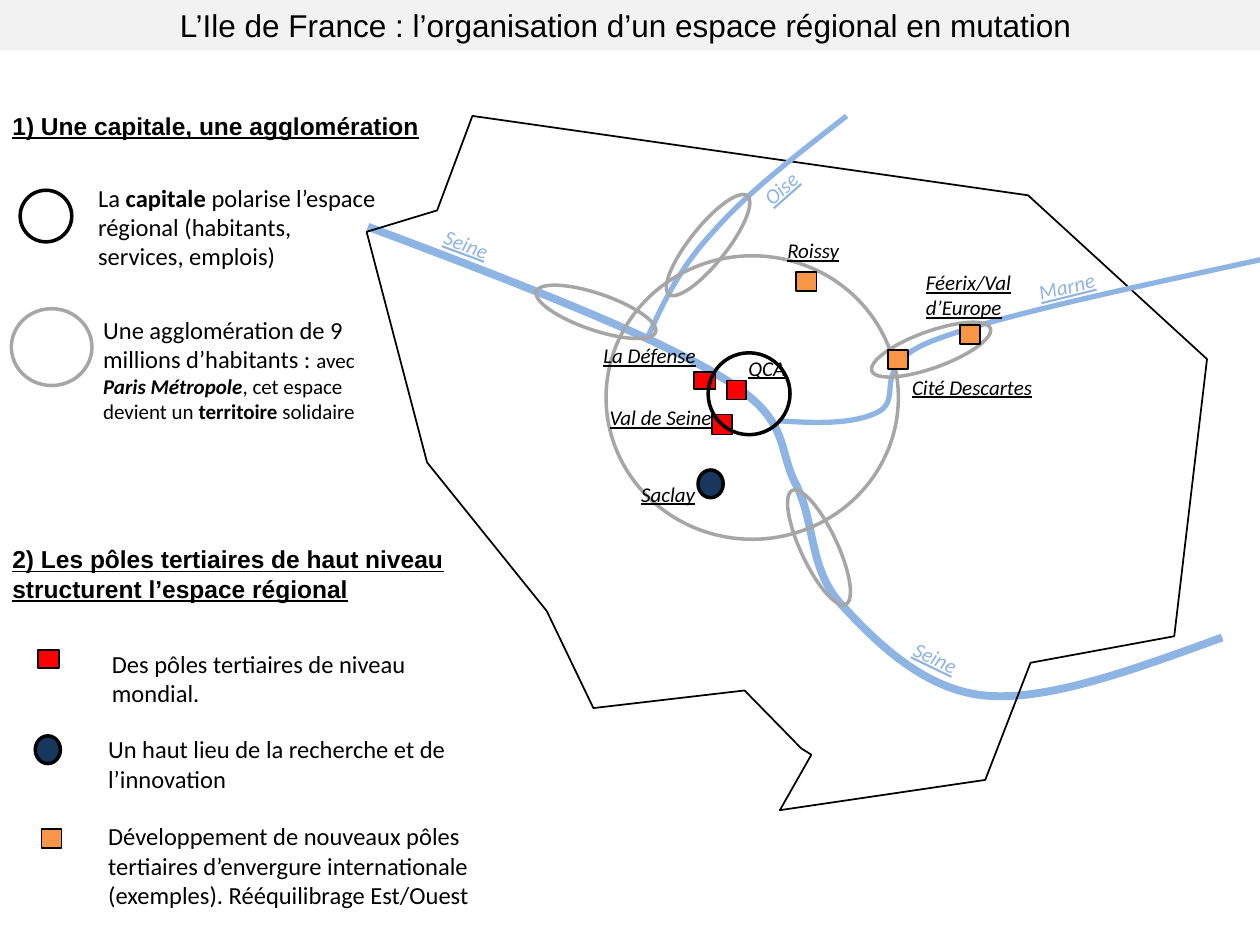
from typing import NamedTuple, Optional

from lxml.etree import SubElement
from pptx import Presentation
from pptx.dml.color import RGBColor
from pptx.enum.shapes import MSO_SHAPE as Preset
from pptx.enum.text import MSO_ANCHOR, PP_ALIGN
from pptx.oxml.ns import qn
from pptx.util import Inches, Pt

BLACK = RGBColor(0x00, 0x00, 0x00)
WHITE = RGBColor(0xFF, 0xFF, 0xFF)
RED = RGBColor(0xFF, 0x00, 0x00)
ORANGE = RGBColor(0xF7, 0x96, 0x46)
NAVY = RGBColor(0x17, 0x37, 0x5E)
GREY = RGBColor(0xA6, 0xA6, 0xA6)
PALE_GREY = RGBColor(0xF2, 0xF2, 0xF2)
RIVER_BLUE = RGBColor(0x8E, 0xB4, 0xE3)


class Style(NamedTuple):
    preset: Preset
    fill: Optional[RGBColor]
    line: RGBColor
    weight: float


class Symbol(NamedTuple):
    style: Style
    left: float
    top: float
    width: float
    height: float
    rotation: float = 0


class Label(NamedTuple):
    text: str
    left: float
    top: float
    width: float
    height: float = 0.3
    rotation: float = 0
    color: RGBColor = BLACK


class Span(NamedTuple):
    text: str
    size: float = 14
    bold: bool = False
    italic: bool = False


class Legend(NamedTuple):
    left: float
    top: float
    width: float
    height: float
    spans: list[Span]


class River(NamedTuple):
    weight: float
    points: list[tuple[float, float]]


WORLD_HUB = Style(Preset.RECTANGLE, RED, BLACK, 1)
NEW_HUB = Style(Preset.RECTANGLE, ORANGE, BLACK, 1)
RESEARCH = Style(Preset.OVAL, NAVY, BLACK, 2)
CAPITAL = Style(Preset.OVAL, None, BLACK, 2)
URBAN_AREA = Style(Preset.OVAL, None, GREY, 2)

# Each river is a start point followed by groups of three Bézier points.
SEINE = River(4.5, [
    (2.92, 1.8), (4.04, 2.22), (5.16, 2.65), (5.72, 2.99),
    (6.29, 3.33), (6.16, 3.55), (6.32, 3.85),
    (6.47, 4.15), (6.42, 4.51), (6.67, 4.79),
    (6.92, 5.06), (7.31, 5.47), (7.81, 5.52),
    (8.31, 5.57), (9.01, 5.31), (9.7, 5.06)])
MARNE = River(3, [
    (10.01, 2.06), (8.96, 2.29), (7.9, 2.51), (7.39, 2.71),
    (6.89, 2.91), (7.18, 3.16), (6.97, 3.27),
    (6.77, 3.37), (6.47, 3.36), (6.18, 3.34)])
OISE = River(3, [
    (6.72, 0.92), (6.32, 1.23), (5.92, 1.54), (5.66, 1.84),
    (5.39, 2.13), (5.26, 2.41), (5.13, 2.7)])
REGION = [
    (3.75, 0.92), (8.16, 1.55), (9.58, 2.85), (9.32, 5.05), (8.18, 5.26),
    (7.82, 6.19), (6.19, 6.43), (6.44, 5.99), (6.36, 5.94), (5.91, 5.48),
    (4.71, 5.62), (4.34, 4.85), (3.39, 3.67), (2.91, 1.84), (3.47, 1.67)]

WORLD_HUBS = [
    Symbol(WORLD_HUB, 5.65, 3.29, 0.16, 0.16),
    Symbol(WORLD_HUB, 5.51, 2.95, 0.17, 0.14),
    Symbol(WORLD_HUB, 5.77, 3.02, 0.15, 0.15),
]
MAP_SYMBOLS = [
    Symbol(CAPITAL, 5.62, 2.8, 0.65, 0.65),
    Symbol(URBAN_AREA, 4.81, 2.03, 2.32, 2.25),
    *(Symbol(URBAN_AREA, left, top, 1, 0.29, rotation) for left, top, rotation in (
        (6.89, 2.63, 340.2), (6, 4.2, 64.9), (5.12, 1.8, 308.5), (4.23, 2.33, 198.8))),
    *(Symbol(NEW_HUB, left, top, 0.16, 0.15) for left, top in (
        (6.32, 2.16), (7.62, 2.58), (7.05, 2.78))),
    Symbol(RESEARCH, 5.54, 3.73, 0.2, 0.22),
]
LEGEND_SYMBOLS = [
    Symbol(CAPITAL, 0.16, 1.51, 0.41, 0.41),
    Symbol(URBAN_AREA._replace(fill=WHITE), 0.09, 2.45, 0.64, 0.61),
    Symbol(WORLD_HUB, 0.3, 5.16, 0.17, 0.14),
    Symbol(RESEARCH, 0.28, 5.84, 0.2, 0.22),
    Symbol(NEW_HUB, 0.33, 6.58, 0.16, 0.15),
]
LABELS = [
    Label("Val de Seine", 4.74, 3.16, 1.03),
    Label("QCA", 5.84, 2.77, 0.55),
    Label("La Défense", 4.69, 2.67, 1.19),
    Label("Saclay", 4.99, 3.77, 1.01),
    Label("Roissy", 6.15, 1.84, 0.74),
    Label("Féerix/Val d’Europe", 7.25, 2.09, 1.11, 0.51),
    Label("Cité Descartes", 7.14, 2.92, 1.47),
    Label("Seine", 7.14, 5.11, 0.74, rotation=25.9, color=RIVER_BLUE),
    Label("Seine", 3.42, 1.82, 0.74, rotation=20.5, color=RIVER_BLUE),
    Label("Marne", 8.14, 2.11, 0.74, rotation=346.2, color=RIVER_BLUE),
    Label("Oise", 5.92, 1.26, 0.74, rotation=318.6, color=RIVER_BLUE),
]
HEADINGS = [
    Label("1) Une capitale, une agglomération", 0, 0.83, 3.89, 0.34),
    Label("2) Les pôles tertiaires de haut niveau structurent l’espace régional",
          0, 4.27, 3.76, 0.57),
]
LEGENDS = [
    Legend(0.68, 1.4, 2.45, 0.81, [
        Span("La "), Span("capitale", bold=True),
        Span(" polarise l’espace régional (habitants, services, emplois)")]),
    Legend(0.72, 2.45, 2.28, 0.98, [
        Span("Une agglomération de 9 millions d’habitants : "), Span("avec ", 12),
        Span("Paris Métropole", 12, True, True), Span(", cet espace devient un ", 12),
        Span("territoire", 12, True), Span(" solidaire", 12)]),
    Legend(0.79, 5.1, 2.96, 0.57, [Span("Des pôles tertiaires de niveau mondial.")]),
    Legend(0.76, 5.78, 2.96, 0.57, [
        Span("Un haut lieu de la recherche et de l’innovation")]),
    Legend(0.76, 6.47, 3.55, 0.81, [
        Span("Développement de nouveaux pôles tertiaires d’envergure internationale "
             "(exemples). Rééquilibrage Est/Ouest")]),
]


def add_outline(page, points, color: RGBColor, weight: float, close: bool):
    start, *rest = [(Inches(x), Inches(y)) for x, y in points]
    builder = page.shapes.build_freeform(*start, scale=1.0)
    builder.add_line_segments(rest, close=close)
    outline = builder.convert_to_shape()
    outline.shadow.inherit = False
    outline.fill.background()
    outline.line.color.rgb = color
    outline.line.width = Pt(weight)
    return outline


def add_river(page, river: River) -> None:
    """Draw the points as an open line, then turn each three segments into a curve."""
    outline = add_outline(page, river.points, RIVER_BLUE, river.weight, close=False)
    path = outline._element.find(".//" + qn("a:path"))
    segments = path.findall(qn("a:lnTo"))
    for first in range(0, len(segments), 3):
        curve = SubElement(path, qn("a:cubicBezTo"))
        for segment in segments[first:first + 3]:
            curve.append(segment[0])
            path.remove(segment)


def add_symbol(page, symbol: Symbol) -> None:
    style = symbol.style
    shape = page.shapes.add_shape(style.preset, *map(Inches, symbol[1:5]))
    shape.shadow.inherit = False
    shape.rotation = symbol.rotation
    if style.fill is None:
        shape.fill.background()
    else:
        shape.fill.solid()
        shape.fill.fore_color.rgb = style.fill
    shape.line.color.rgb = style.line
    shape.line.width = Pt(style.weight)


def set_font(font, name: str, size: float, color: RGBColor = BLACK) -> None:
    font.name, font.size, font.color.rgb = name, Pt(size), color


def add_label(page, label: Label, heading: bool = False) -> None:
    box = page.shapes.add_textbox(*map(Inches, label[1:5]))
    box.rotation = label.rotation
    box.text_frame.word_wrap = True
    para = box.text_frame.paragraphs[0]
    para.text = label.text
    set_font(para.font, "Arial" if heading else "Calibri", 14 if heading else 12, label.color)
    para.font.bold, para.font.italic, para.font.underline = heading, not heading, True


def add_legend(page, legend: Legend) -> None:
    box = page.shapes.add_textbox(*map(Inches, legend[:4]))
    box.text_frame.word_wrap = True
    para = box.text_frame.paragraphs[0]
    for span in legend.spans:
        run = para.add_run()
        run.text = span.text
        set_font(run.font, "Calibri", span.size)
        run.font.bold, run.font.italic = span.bold, span.italic


def add_title(page, text: str) -> None:
    banner = page.shapes.add_shape(Preset.RECTANGLE, 0, 0, Inches(10), Inches(0.4))
    banner.shadow.inherit = False
    banner.fill.solid()
    banner.fill.fore_color.rgb = PALE_GREY
    banner.line.fill.background()
    banner.text_frame.vertical_anchor = MSO_ANCHOR.MIDDLE
    para = banner.text_frame.paragraphs[0]
    para.text, para.alignment = text, PP_ALIGN.CENTER
    set_font(para.font, "Arial", 18)


def main() -> None:
    deck = Presentation()
    deck.slide_width, deck.slide_height = Inches(10), Inches(7.5)
    page = deck.slides.add_slide(deck.slide_layouts[6])
    add_river(page, SEINE)
    add_outline(page, REGION, BLACK, 1, close=True)
    for symbol in WORLD_HUBS:
        add_symbol(page, symbol)
    for river in (MARNE, OISE):
        add_river(page, river)
    for symbol in MAP_SYMBOLS + LEGEND_SYMBOLS:
        add_symbol(page, symbol)
    for label in LABELS:
        add_label(page, label)
    for heading in HEADINGS:
        add_label(page, heading, heading=True)
    for legend in LEGENDS:
        add_legend(page, legend)
    add_title(page, "L’Ile de France : l’organisation d’un espace régional en mutation ")
    deck.save("out.pptx")


if __name__ == "__main__":
    main()
